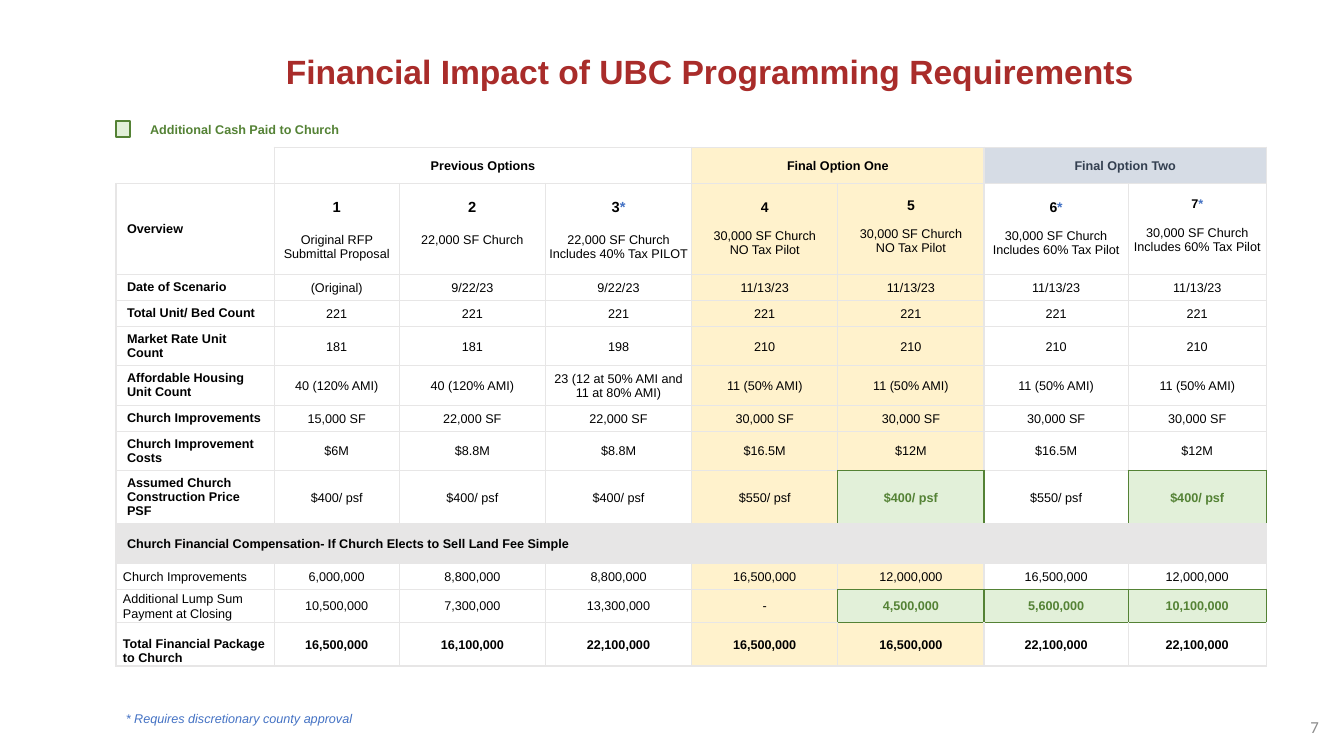
import dataclasses
import typing

import lxml.etree
import pptx
import pptx.dml.color
import pptx.enum.shapes
import pptx.enum.text
import pptx.oxml.ns
import pptx.util

Inches = pptx.util.Inches
Pt = pptx.util.Pt
Align = pptx.enum.text.PP_ALIGN
Anchor = pptx.enum.text.MSO_ANCHOR

COLORS = {
    "black": "000000", "white": "FFFFFF", "title": "A92C2A", "green": "548235",
    "pale_green": "E2F0D9", "cream": "FFF2CC", "slate": "D6DCE5", "navy": "333F50",
    "gray": "E7E6E6", "blue": "4472C4", "page": "8C8C8C",
}
COLUMN_WIDTHS = [1.57, 1.24, 1.45, 1.45, 1.45, 1.45, 1.43, 1.37]
ROW_HEIGHTS = [0.36, 0.9, 0.26, 0.26, 0.39, 0.39, 0.26, 0.39, 0.53, 0.39, 0.26, 0.33, 0.43]
SECTION_ROW = 9
TOTAL_ROW = 12
CREAM_COLUMNS = (4, 5)
HIGHLIGHTS = {(8, 5), (8, 7), (11, 5), (11, 6), (11, 7)}
SECTION = "Church Financial Compensation- If Church Elects to Sell Land Fee Simple"

ROWS = {
    2: ["Date of Scenario", "(Original)"] + ["9/22/23"] * 2 + ["11/13/23"] * 4,
    3: ["Total Unit/ Bed Count"] + ["221"] * 7,
    4: ["Market Rate Unit Count", "181", "181", "198"] + ["210"] * 4,
    5: ["Affordable Housing Unit Count", "40 (120% AMI)", "40 (120% AMI)",
        "23 (12 at 50% AMI and 11 at 80% AMI)"] + ["11 (50% AMI)"] * 4,
    6: ["Church Improvements", "15,000 SF"] + ["22,000 SF"] * 2 + ["30,000 SF"] * 4,
    7: ["Church Improvement Costs", "$6M", "$8.8M", "$8.8M", "$16.5M", "$12M", "$16.5M", "$12M"],
    8: ["Assumed Church Construction Price PSF"] + ["$400/ psf"] * 3 + ["$550/ psf", "$400/ psf"] * 2,
    10: ["Church Improvements", "6,000,000", "8,800,000", "8,800,000",
         "16,500,000", "12,000,000", "16,500,000", "12,000,000"],
    11: ["Additional Lump Sum\nPayment at Closing", "10,500,000", "7,300,000", "13,300,000",
         "-", "4,500,000", "5,600,000", "10,100,000"],
    12: ["Total Financial Package\nto Church", "16,500,000", "16,100,000", "22,100,000",
         "16,500,000", "16,500,000", "22,100,000", "22,100,000"],
}


@dataclasses.dataclass
class Heading:
    text: str
    first: int
    last: int
    fill: typing.Optional[str]
    color: str = "black"


@dataclasses.dataclass
class Option:
    number: str
    details: list[str]
    starred: bool = False
    size: float = 10
    top: float = 0.16
    gap: float = 10


@dataclasses.dataclass
class Label:
    text: str
    left: float
    top: float
    width: float
    height: float
    size: float
    color: str
    bold: bool = False
    italic: bool = False
    font: str = "Arial"
    align: Align = Align.LEFT
    anchor: Anchor = Anchor.TOP
    wrap: bool = True
    spacing: float = 1.0


HEADINGS = [
    Heading("Previous Options", 1, 3, None),
    Heading("Final Option One", 4, 5, "cream"),
    Heading("Final Option Two", 6, 7, "slate", "navy"),
]
OPTIONS = [
    Option("1", ["Original RFP Submittal Proposal"], size=10.5, gap=12),
    Option("2", ["22,000 SF Church"], size=10.5, gap=12),
    Option("3", ["22,000 SF Church", "Includes 40% Tax PILOT"], True, 10.5, gap=12),
    Option("4", ["30,000 SF Church", "NO Tax Pilot"]),
    Option("5", ["30,000 SF Church", "NO Tax Pilot"], top=0.14),
    Option("6", ["30,000 SF Church", "Includes 60% Tax Pilot"], True),
    Option("7", ["30,000 SF Church", "Includes 60% Tax Pilot"], True, 9, 0.14),
]
LABELS = [
    Label("Financial Impact of UBC Programming Requirements", 1.29, 0.5, 11.5, 0.54, 24,
          "title", bold=True, align=Align.CENTER, spacing=0.9),
    Label("Additional Cash Paid to Church", 1.39, 1.16, 2.13, 0.25, 9, "green", bold=True, wrap=False),
    Label("* Requires discretionary county approval", 1.15, 7, 2.5, 0.25, 9, "blue",
          italic=True, wrap=False),
    Label("7", 9.39, 7.01, 3.79, 0.4, 12, "page", font="Calibri", align=Align.RIGHT,
          anchor=Anchor.MIDDLE),
]


def rgb(name: str) -> pptx.dml.color.RGBColor:
    return pptx.dml.color.RGBColor.from_string(COLORS[name])


def set_font(font, size: float, color: str, bold: bool = False, italic: bool = False,
             name: str = "Arial") -> None:
    font.name, font.size, font.bold, font.italic = name, Pt(size), bold, italic
    font.color.rgb = rgb(color)


def add_label(page, label: Label) -> None:
    box = page.shapes.add_textbox(*map(Inches, (label.left, label.top, label.width, label.height)))
    frame = box.text_frame
    frame.word_wrap, frame.vertical_anchor = label.wrap, label.anchor
    para = frame.paragraphs[0]
    para.text, para.alignment, para.line_spacing = label.text, label.align, label.spacing
    set_font(para.font, label.size, label.color, label.bold, label.italic, label.font)


def set_margins(cell, side: float, top: float, bottom: float) -> None:
    cell.margin_left = cell.margin_right = Inches(side)
    cell.margin_top, cell.margin_bottom = Inches(top), Inches(bottom)


def write_cell(cell, text: str, color: str = "black", bold: bool = False,
               align: Align = Align.CENTER) -> None:
    cell.vertical_anchor = Anchor.MIDDLE
    cell.text = text
    for para in cell.text_frame.paragraphs:
        para.alignment = align
        set_font(para.font, 9, color, bold)


def write_row_label(cell, row: int, text: str) -> None:
    write_cell(cell, text, bold=row <= SECTION_ROW or row == TOTAL_ROW, align=Align.LEFT)
    if row <= SECTION_ROW:
        set_margins(cell, 0.11, 0.05, 0.05)
    else:
        set_margins(cell, 0.07, 0.14 if row == TOTAL_ROW else 0.01, 0)


def write_option(cell, option: Option) -> None:
    write_cell(cell, "\n".join([option.number] + option.details))
    cell.vertical_anchor = Anchor.TOP
    set_margins(cell, 0.01, option.top, 0)
    number, detail = cell.text_frame.paragraphs[:2]
    set_font(number.font, option.size, "black", True)
    detail.space_before = Pt(option.gap)
    if option.starred:
        span = number.add_run()
        span.text = "*"
        span.font.color.rgb = rgb("blue")


def set_borders(cell, row: int, column: int) -> None:
    neighbors = {"lnL": (row, column - 1), "lnR": (row, column + 1),
                 "lnT": (row - 1, column), "lnB": (row + 1, column)}
    properties = cell._tc.get_or_add_tcPr()
    for tag, neighbor in neighbors.items():
        line = lxml.etree.SubElement(properties, pptx.oxml.ns.qn("a:" + tag), w=str(Pt(1)))
        if (row, column) == (0, 0) and tag in ("lnL", "lnT"):
            lxml.etree.SubElement(line, pptx.oxml.ns.qn("a:noFill"))
            continue
        green = row != SECTION_ROW and not HIGHLIGHTS.isdisjoint({(row, column), neighbor})
        fill = lxml.etree.SubElement(line, pptx.oxml.ns.qn("a:solidFill"))
        lxml.etree.SubElement(fill, pptx.oxml.ns.qn("a:srgbClr"),
                              val=COLORS["green" if green else "gray"])


def set_fill(cell, name: typing.Optional[str]) -> None:
    if name is None:
        cell.fill.background()
    else:
        cell.fill.solid()
        cell.fill.fore_color.rgb = rgb(name)


def body_fill(row: int, column: int) -> typing.Optional[str]:
    if (row, column) in HIGHLIGHTS:
        return "pale_green"
    if row == SECTION_ROW:
        return "gray"
    if row > 0 and column in CREAM_COLUMNS:
        return "cream"
    return "white" if row > 0 and column > 5 else None


def add_options_table(page) -> None:
    frame = page.shapes.add_table(len(ROW_HEIGHTS), len(COLUMN_WIDTHS), Inches(1.15), Inches(1.46),
                                  Inches(sum(COLUMN_WIDTHS)), Inches(sum(ROW_HEIGHTS)))
    table = frame.table
    table.first_row = table.horz_banding = False
    for column, width in zip(table.columns, COLUMN_WIDTHS):
        column.width = Inches(width)
    for row, height in enumerate(ROW_HEIGHTS):
        table.rows[row].height = Inches(height)
        for column in range(len(COLUMN_WIDTHS)):
            cell = table.cell(row, column)
            set_margins(cell, 0.01, 0.01, 0)
            set_borders(cell, row, column)
            set_fill(cell, body_fill(row, column))
    for heading in HEADINGS:
        cell = table.cell(0, heading.first)
        cell.merge(table.cell(0, heading.last))
        write_cell(cell, heading.text, heading.color, True)
        set_fill(cell, heading.fill)
    write_row_label(table.cell(1, 0), 1, "Overview")
    for column, option in enumerate(OPTIONS, 1):
        write_option(table.cell(1, column), option)
    table.cell(SECTION_ROW, 0).merge(table.cell(SECTION_ROW, len(COLUMN_WIDTHS) - 1))
    write_row_label(table.cell(SECTION_ROW, 0), SECTION_ROW, SECTION)
    for row, (name, *values) in ROWS.items():
        write_row_label(table.cell(row, 0), row, name)
        for column, value in enumerate(values, 1):
            marked = (row, column) in HIGHLIGHTS
            write_cell(table.cell(row, column), value, "green" if marked else "black",
                       marked or row == TOTAL_ROW)


def add_legend_key(page) -> None:
    key = page.shapes.add_shape(pptx.enum.shapes.MSO_SHAPE.RECTANGLE,
                                *map(Inches, (1.15, 1.2, 0.14, 0.16)))
    key.shadow.inherit = False
    set_fill(key, "pale_green")
    key.line.color.rgb = rgb("green")
    key.line.width = Pt(1)


def main() -> None:
    deck = pptx.Presentation()
    deck.slide_width, deck.slide_height = Inches(13.33), Inches(7.5)
    page = deck.slides.add_slide(deck.slide_layouts[6])
    add_options_table(page)
    add_legend_key(page)
    for label in LABELS:
        add_label(page, label)
    deck.save("out.pptx")


if __name__ == "__main__":
    main()
